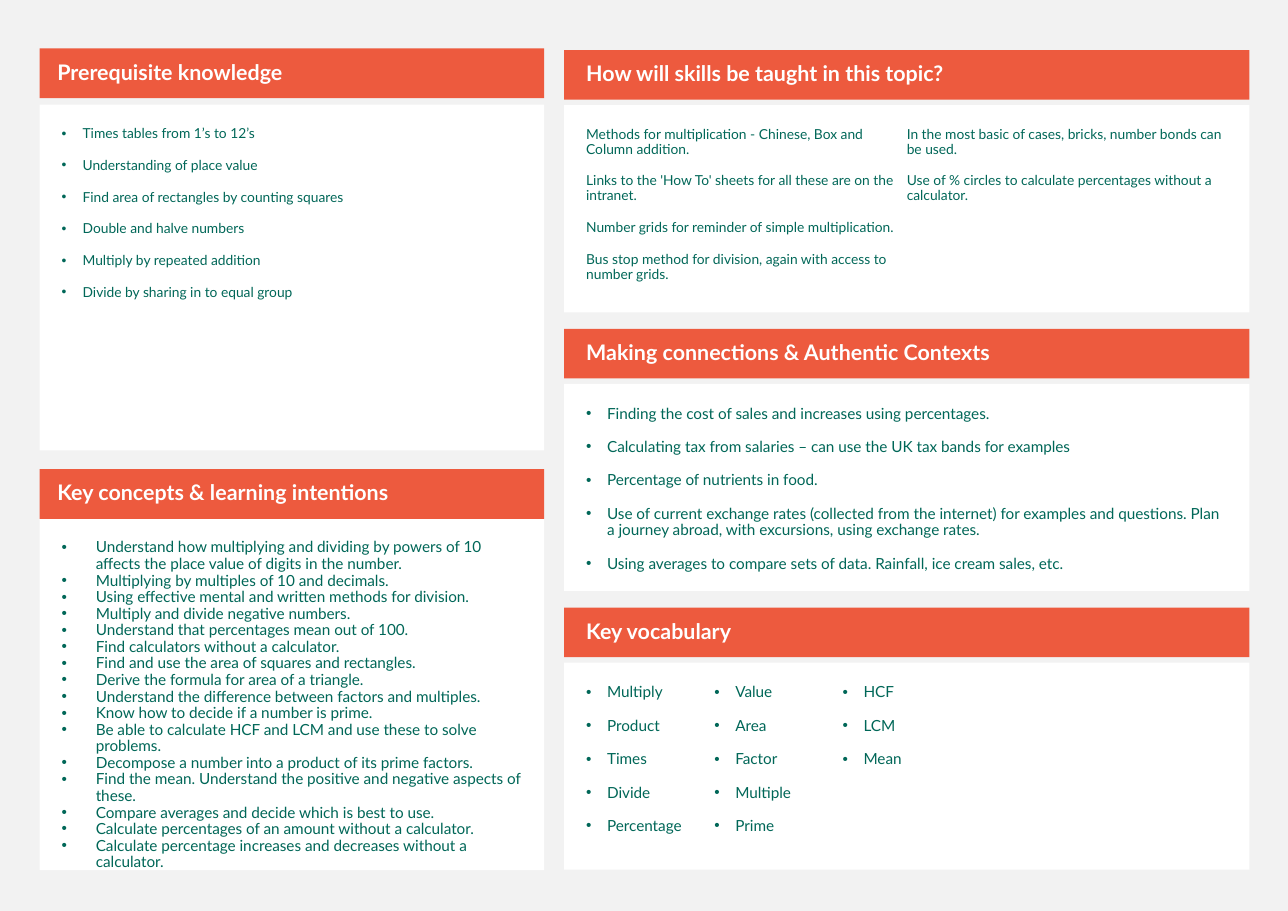
"""Builds a topic overview sheet with five headed panels on one slide."""
from lxml import etree
from pptx import Presentation, util as u
from pptx.dml.color import RGBColor
from pptx.enum import shapes, text
from pptx.oxml.ns import qn

COLOURS = {"page": "F2F2F2", "panel": "FFFFFF", "band": "ED5A3E",
           "heading": "FFFFFF", "body": "006758"}
FONT = "Lato"
CELL = u.Inches(0.1)
PAGE_WIDTH, PAGE_HEIGHT = 116.9, 82.7
BAND_HEIGHT = 4.5
LEFT_COLUMN = (3.6, 45.8)
RIGHT_COLUMN = (51.2, 62.2)
LEFT_TOP, LEFT_PITCH = 4.4, 38.2
RIGHT_TOP, RIGHT_PITCH, RIGHT_PANEL = 4.55, 25.3, 18.8

PREREQUISITES = [
    "Times tables from 1’s to 12’s",
    "Understanding of place value",
    "Find area of rectangles by counting squares",
    "Double and halve numbers",
    "Multiply by repeated addition",
    "Divide by sharing in to equal group",
]
CONCEPTS = [
    "Understand how multiplying and dividing by powers of 10 affects the place value of digits in the number.",
    "Multiplying by multiples of 10 and decimals.",
    "Using effective mental and written methods for division.",
    "Multiply and divide negative numbers.",
    "Understand that percentages mean out of 100.",
    "Find calculators without a calculator.",
    "Find and use the area of squares and rectangles.",
    "Derive the formula for area of a triangle.",
    "Understand the difference between factors and multiples.",
    "Know how to decide if a number is prime.",
    "Be able to calculate HCF and LCM and use these to solve problems.",
    "Decompose a number into a product of its prime factors.",
    "Find the mean. Understand the positive and negative aspects of these.",
    "Compare averages and decide which is best to use.",
    "Calculate percentages of an amount without a calculator.",
    "Calculate percentage increases and decreases without a calculator.",
]
SKILLS = [
    "Methods for multiplication - Chinese, Box and Column addition.",
    "Links to the 'How To' sheets for all these are on the intranet.",
    "Number grids for reminder of simple multiplication.",
    "Bus stop method for division, again with access to number grids.",
    "In the most basic of cases, bricks, number bonds can be used.",
    "Use of % circles to calculate percentages without a calculator.",
]
CONNECTIONS = [
    "Finding the cost of sales and increases using percentages.",
    "Calculating tax from salaries – can use the UK tax bands for examples",
    "Percentage of nutrients in food.",
    "Use of current exchange rates (collected from the internet) for examples and questions. "
    "Plan a journey abroad, with excursions, using exchange rates.",
    "Using averages to compare sets of data. Rainfall, ice cream sales, etc.",
]
VOCABULARY = [
    "Multiply", "Product", "Times", "Divide", "Percentage",
    "Value", "Area", "Factor", "Multiple", "Prime",
    "HCF", "LCM", "Mean",
]


def cells(count):
    return u.Emu(round(count * CELL))


def assign(target, values):
    for key, value in values.items():
        setattr(target, key, value)


class Sheet:
    def __init__(self, slide):
        self.slide = slide
        background = slide.background.fill
        background.solid()
        background.fore_color.rgb = RGBColor.from_string(COLOURS["page"])

    def block(self, column, top, height, colour, margins, anchor):
        left, width = column
        block = self.slide.shapes.add_shape(
            shapes.MSO_SHAPE.RECTANGLE, *map(cells, (left, top, width, height)))
        block.shadow.inherit = False
        block.fill.solid()
        block.fill.fore_color.rgb = RGBColor.from_string(COLOURS[colour])
        block.line.fill.background()
        sides = ("margin_left", "margin_top", "margin_right", "margin_bottom")
        assign(block.text_frame, dict(zip(sides, map(cells, margins))))
        assign(block.text_frame, {"word_wrap": True, "vertical_anchor": anchor})
        return block.text_frame

    def paragraphs(self, frame, lines, colour, size, bold=False, before=11, indent=0):
        for number, line in enumerate(lines):
            paragraph = frame.add_paragraph() if number else frame.paragraphs[0]
            assign(paragraph, {"alignment": text.PP_ALIGN.LEFT, "line_spacing": 0.9,
                               "space_before": u.Pt(before)})
            if indent:
                self.bullet(paragraph, cells(indent))
            run = paragraph.add_run()
            run.text = line
            assign(run.font, {"name": FONT, "size": u.Pt(size), "bold": bold})
            run.font.color.rgb = RGBColor.from_string(COLOURS[colour])

    def bullet(self, paragraph, indent):
        properties = paragraph._p.get_or_add_pPr()
        properties.set("marL", str(indent))
        properties.set("indent", str(-indent))
        etree.SubElement(properties, qn("a:buFont")).set("typeface", "Arial")
        etree.SubElement(properties, qn("a:buChar")).set("char", "•")

    def panel(self, column, top, height, lines, offset=5, columns=1, **style):
        frame = self.block(column, top + offset, height, "panel", (2, 2, 2, 2),
                           text.MSO_ANCHOR.TOP)
        if columns > 1:
            frame._txBody.bodyPr.set("numCol", str(columns))
        self.paragraphs(frame, lines, "body", **style)

    def band(self, column, top, heading, inset):
        frame = self.block(column, top, BAND_HEIGHT, "band", (inset, 0.5, 1, 0.5),
                           text.MSO_ANCHOR.MIDDLE)
        self.paragraphs(frame, [heading], "heading", 14, bold=True)


def main():
    deck = Presentation()
    assign(deck, {"slide_width": cells(PAGE_WIDTH), "slide_height": cells(PAGE_HEIGHT)})
    sheet = Sheet(deck.slides.add_slide(deck.slide_layouts[6]))

    left_panels = [
        ("Prerequisite knowledge", PREREQUISITES,
         {"height": 31.4, "offset": 5.1, "size": 9, "indent": 1.9}),
        ("Key concepts & learning intentions", CONCEPTS,
         {"height": 32, "offset": 4.4, "size": 10, "before": 0, "indent": 3.1}),
    ]
    right_panels = [
        ("How will skills be taught in this topic?", SKILLS, {"columns": 2, "size": 9}),
        ("Making connections & Authentic Contexts", CONNECTIONS, {"size": 10, "indent": 1.9}),
        ("Key vocabulary", VOCABULARY, {"columns": 5, "size": 10, "indent": 1.9}),
    ]
    for row, (heading, lines, style) in enumerate(left_panels):
        top = LEFT_TOP + row * LEFT_PITCH
        sheet.panel(LEFT_COLUMN, top, lines=lines, **style)
        sheet.band(LEFT_COLUMN, top, heading, 1.6)
    for row, (heading, lines, style) in enumerate(right_panels):
        top = RIGHT_TOP + row * RIGHT_PITCH
        sheet.panel(RIGHT_COLUMN, top, RIGHT_PANEL, lines, **style)
        sheet.band(RIGHT_COLUMN, top, heading, 2)

    deck.save("out.pptx")


if __name__ == "__main__":
    main()
